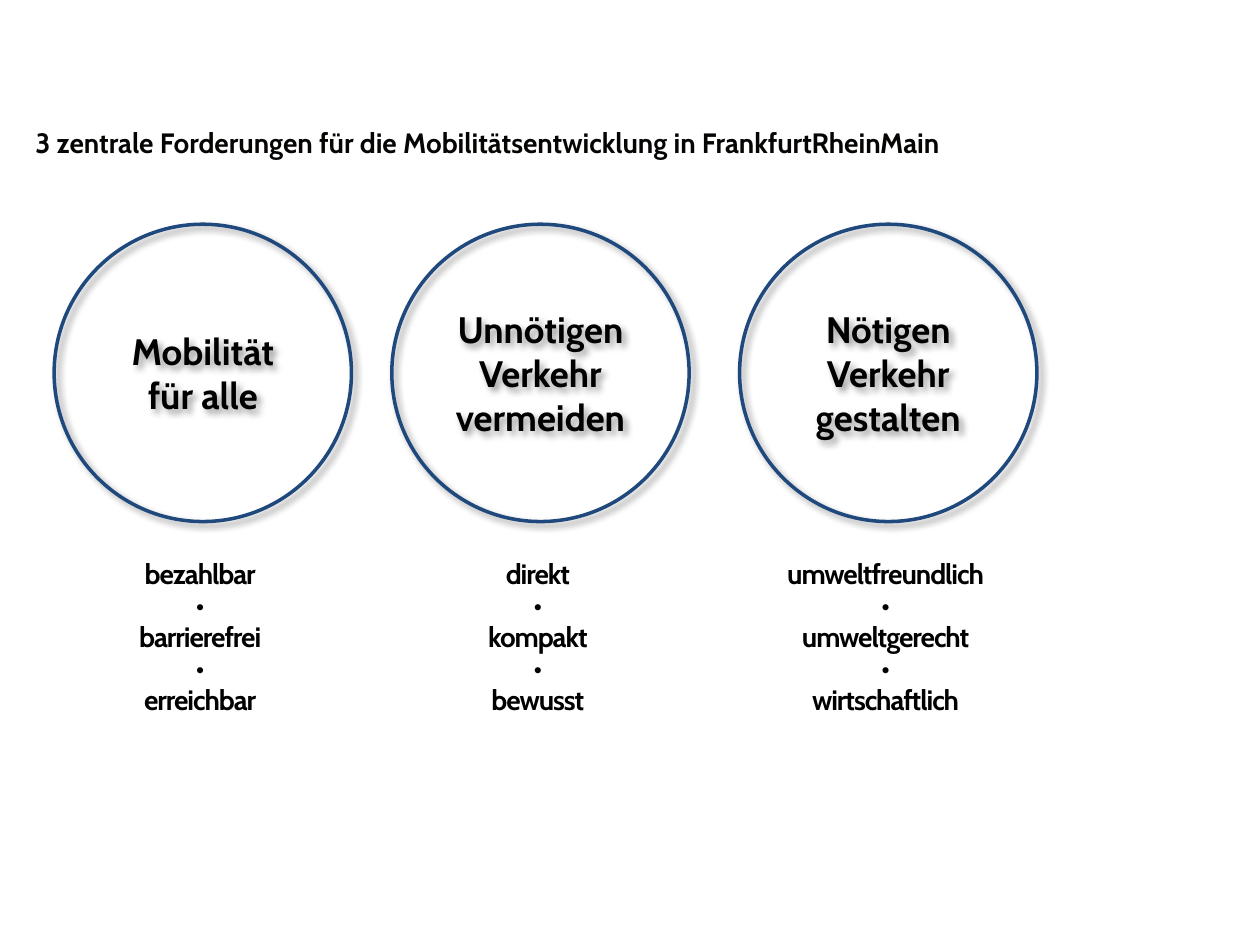
from lxml import etree
from pptx import Presentation
from pptx.dml.color import RGBColor
from pptx.enum.shapes import MSO_SHAPE
from pptx.enum.text import MSO_ANCHOR, PP_ALIGN
from pptx.oxml.ns import qn
from pptx.util import Inches, Pt

CIRCLE = MSO_SHAPE.OVAL
LEFT, CENTER = PP_ALIGN.LEFT, PP_ALIGN.CENTER
TOP, MIDDLE = MSO_ANCHOR.TOP, MSO_ANCHOR.MIDDLE

# One grid unit is a tenth of an inch: 100 columns by 75 rows
COLUMNS, ROWS = 100, 75
BLANK_LAYOUT = 6


def grid(units):
    return Inches(units / 10)


def color(value):
    return RGBColor.from_string(value)


def write(para, text, size=16, bold=True, ink="000000", font="Cabin", spacing=None):
    span = para.add_run()
    span.text = text
    span.font.size = Pt(size)
    span.font.bold = bold
    span.font.name = font
    span.font.color.rgb = color(ink)
    if spacing is not None:
        span._r.get_or_add_rPr().set("spc", str(round(spacing * 100)))


def add_shadow(shape, ink="000000", opacity=40, blur=4, distance=3, angle=45):
    shape.shadow.inherit = False
    effects = shape._element.spPr.find(qn("a:effectLst"))
    outer = etree.SubElement(
        effects, qn("a:outerShdw"), blurRad=str(Pt(blur)), dist=str(Pt(distance)),
        dir=str(angle * 60000), algn="tl", rotWithShape="0")
    tint = etree.SubElement(outer, qn("a:srgbClr"), val=ink)
    etree.SubElement(tint, qn("a:alpha"), val=str(opacity * 1000))


class DemandSlide:
    outline = "1F497D"
    title_ink = "060503"
    diameter = 23.6

    def __init__(self, deck):
        self.page = deck.slides.add_slide(deck.slide_layouts[BLANK_LAYOUT])

    def text_box(self, left, top, width, height):
        box = self.page.shapes.add_textbox(*map(grid, (left, top, width, height)))
        frame = box.text_frame
        frame.word_wrap = True
        frame.vertical_anchor = TOP
        frame.margin_left = frame.margin_right = 0
        frame.margin_top = frame.margin_bottom = 0
        return frame.paragraphs[0]

    def title(self, text):
        para = self.text_box(2.8, 10, 94.5, 2.3)
        para.alignment = LEFT
        write(para, text, ink=self.title_ink)

    def circle(self, center, top, lines):
        shape = self.page.shapes.add_shape(
            CIRCLE, grid(center - self.diameter / 2), grid(top),
            grid(self.diameter), grid(self.diameter))
        shape.fill.background()
        shape.line.color.rgb = color(self.outline)
        shape.line.width = Pt(2)
        add_shadow(shape)
        frame = shape.text_frame
        frame.word_wrap = True
        frame.vertical_anchor = MIDDLE
        for index, line in enumerate(lines):
            para = frame.add_paragraph() if index else frame.paragraphs[0]
            para.alignment = CENTER
            write(para, line, size=21)

    def qualities(self, center, top, width, words):
        para = self.text_box(center - width / 2, top, width, 12.4)
        para.alignment = CENTER
        para.line_spacing = Pt(18)
        for index, word in enumerate(words):
            if index:
                para.add_line_break()
                write(para, "• ", bold=False, spacing=-0.6)
                para.add_line_break()
            write(para, word + " ", spacing=-0.6)


# Circle centre, circle lines, width of the word list, words
DEMANDS = [
    (16.1, ["Mobilität", "für alle"], 11.5,
     ["bezahlbar", "barrierefrei", "erreichbar"]),
    (42.9, ["Unnötigen", "Verkehr", "vermeiden"], 11.5,
     ["direkt", "kompakt", "bewusst"]),
    (70.5, ["Nötigen", "Verkehr", "gestalten"], 17.3,
     ["umweltfreundlich", "umweltgerecht", "wirtschaftlich"]),
]


def main():
    deck = Presentation()
    deck.slide_width, deck.slide_height = grid(COLUMNS), grid(ROWS)
    slide = DemandSlide(deck)

    # Three demands, each a circle above its qualities
    for center, lines, width, words in DEMANDS:
        slide.circle(center, 17.8, lines)
        slide.qualities(center, 44.3, width, words)

    # Heading
    slide.title("3 zentrale Forderungen für die Mobilitätsentwicklung in FrankfurtRheinMain")

    deck.save("out.pptx")


if __name__ == "__main__":
    main()
